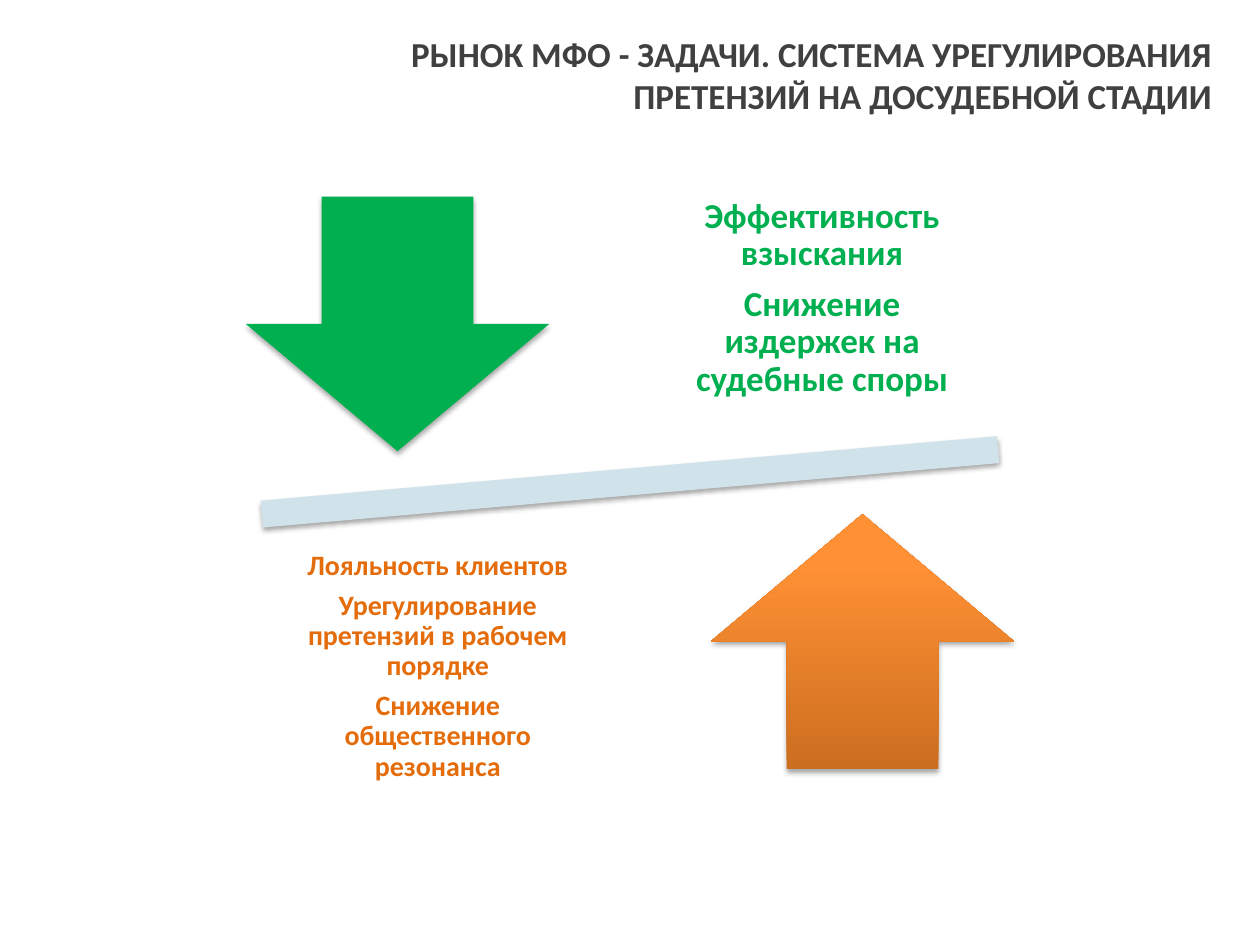
"""Build a slide showing pre-trial claims settlement as a balance of two forces."""
from lxml import etree
from pptx import Presentation
from pptx import util as u
from pptx.dml.color import RGBColor
from pptx.enum import shapes, text
from pptx.oxml.ns import qn

COLORS = {"title": "404040", "green": "00B050", "orange": "E46C0A", "beam": "D0E3EA",
          "grad_dark": "CC6E20", "grad_light": "FF9034", "shadow": "000000"}
FONT = "Calibri"

TITLE = ["РЫНОК МФО - ЗАДАЧИ. СИСТЕМА УРЕГУЛИРОВАНИЯ ПРЕТЕНЗИЙ НА ДОСУДЕБНОЙ СТАДИИ"]
GAINS = ["Эффективность взыскания", "Снижение издержек на судебные споры"]
LOYALTY = ["Лояльность клиентов", "Урегулирование претензий в рабочем порядке",
           "Снижение общественного резонанса"]

ARROW_W, ARROW_H = 173.5, 145.5
LABEL_W, LABEL_H = 185, 152.6
BEAM_BOX = (72.7, 242.6, 574.6, 65.5)
DOWN_BOX = (140.4, 112.3, ARROW_W, ARROW_H)
UP_BOX = (406.1, 293.8, ARROW_W, ARROW_H)
TITLE_BOX = (172.8, -2.2, 527, 90)
GAINS_BOX = (377.3, 94.3, LABEL_W, LABEL_H)
LOYALTY_BOX = (157.7, 304.6, LABEL_W, LABEL_H)


def rgb(name):
    return RGBColor.from_string(COLORS[name])


def add_shadow(sp):
    sp.shadow.inherit = False
    effects = sp._element.spPr.find(qn("a:effectLst"))
    shadow = etree.SubElement(effects, qn("a:outerShdw"), blurRad=str(u.Pt(3.1)),
                              dist=str(u.Pt(1.8)), dir="5400000", rotWithShape="0")
    color = etree.SubElement(shadow, qn("a:srgbClr"), val=COLORS["shadow"])
    etree.SubElement(color, qn("a:alpha"), val="35000")


def add_figure(s, kind, box, color=None, rotation=0):
    sp = s.shapes.add_shape(kind, *map(u.Pt, box))
    sp.rotation = rotation
    sp.line.fill.background()
    if color:
        sp.fill.solid()
        sp.fill.fore_color.rgb = rgb(color)
    else:
        sp.fill.gradient()
        sp.fill.gradient_angle = 90
        stops = (("grad_dark", 0), ("grad_light", 0.8))
        for stop, (name, position) in zip(sp.fill.gradient_stops, stops):
            stop.color.rgb = rgb(name)
            stop.position = position
    add_shadow(sp)


def add_text(s, box, lines, size, color, align, insets, spacing=1):
    tf = s.shapes.add_textbox(*map(u.Pt, box)).text_frame
    tf.word_wrap = True
    tf.vertical_anchor = text.MSO_ANCHOR.MIDDLE
    tf.margin_left = tf.margin_right = u.Pt(insets[0])
    tf.margin_top = tf.margin_bottom = u.Pt(insets[1])
    tf.text = "\n".join(lines)
    for p in tf.paragraphs:
        p.alignment = align
        p.line_spacing = spacing
        if len(lines) > 1:
            p.space_after = u.Pt(0.35 * size)
        for r in p.runs:
            r.font.name, r.font.size, r.font.bold = FONT, u.Pt(size), True
            r.font.color.rgb = rgb(color)


def main():
    prs = Presentation()
    prs.slide_width, prs.slide_height = u.Pt(720), u.Pt(540)
    s = prs.slides.add_slide(prs.slide_layouts[6])
    kinds, align = shapes.MSO_SHAPE, text.PP_ALIGN
    add_text(s, TITLE_BOX, TITLE, 20, "title", align.RIGHT, (7.2, 3.6))
    add_figure(s, kinds.MATH_MINUS, BEAM_BOX, "beam", 355)
    add_figure(s, kinds.DOWN_ARROW, DOWN_BOX, "green")
    add_text(s, GAINS_BOX, GAINS, 20, "green", align.CENTER, (11.2, 11.2), 0.9)
    add_figure(s, kinds.UP_ARROW, UP_BOX)
    add_text(s, LOYALTY_BOX, LOYALTY, 16, "orange", align.CENTER, (9, 9), 0.9)
    prs.save("out.pptx")


if __name__ == "__main__":
    main()
